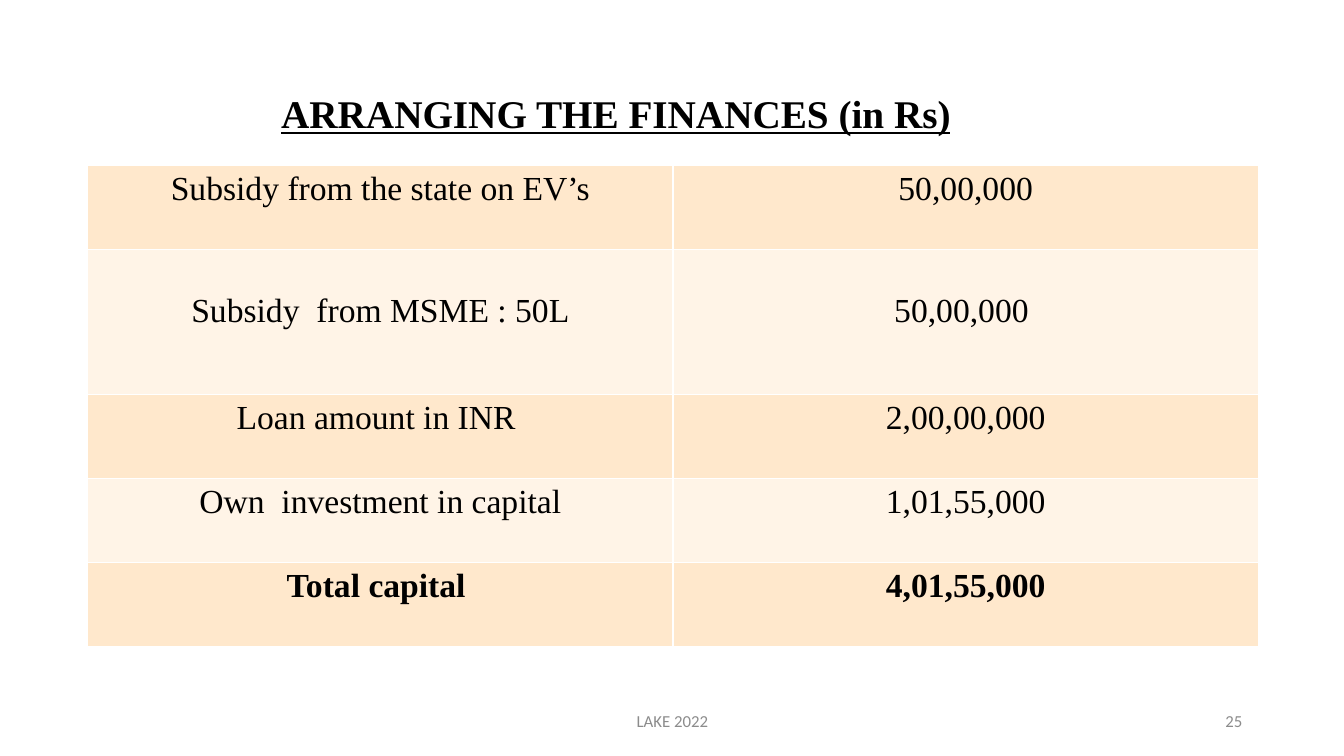
from pptx import Presentation
from pptx.dml.color import RGBColor
from pptx.enum.text import MSO_ANCHOR, PP_ALIGN
from pptx.oxml import parse_xml
from pptx.oxml.ns import nsdecls
from pptx.util import Inches, Pt

BLACK = RGBColor(0x00, 0x00, 0x00)
GREY = RGBColor(0x8C, 0x8C, 0x8C)
PEACH = RGBColor(0xFF, 0xE8, 0xCC)
CREAM = RGBColor(0xFF, 0xF4, 0xE7)
SERIF = "Times New Roman"


def style(para, text, size, face, color, align, bold=False):
    para.text = text
    para.alignment = align
    font = para.font
    font.size = Pt(size)
    font.name = face
    font.color.rgb = color
    font.bold = bold


def label(left, top, width, height, anchor):
    box = slide.shapes.add_textbox(Inches(left), Inches(top), Inches(width), Inches(height))
    frame = box.text_frame
    frame.word_wrap = True
    frame.vertical_anchor = anchor
    return frame.paragraphs[0]


deck = Presentation()
deck.slide_width = Inches(13.33)
deck.slide_height = Inches(7.5)
slide = deck.slides.add_slide(deck.slide_layouts[6])

title = label(2.69, 0.87, 7.17, 0.55, MSO_ANCHOR.TOP)
style(title, "ARRANGING THE FINANCES (in Rs)", 28, SERIF, BLACK, PP_ALIGN.LEFT, True)
title.font.underline = True
title.line_spacing = 0.95

funds = [
    ("Subsidy from the state on EV’s", "50,00,000"),
    ("Subsidy  from MSME : 50L", "50,00,000 "),
    ("Loan amount in INR ", "2,00,00,000"),
    ("Own  investment in capital", "1,01,55,000"),
    ("Total capital ", "4,01,55,000"),
]
TALL = 1
LAST = len(funds) - 1

grid = slide.shapes.add_table(
    len(funds), 2, Inches(0.87), Inches(1.64), Inches(11.61), Inches(4.78)
).table
grid.first_row = False
for row, pair in enumerate(funds):
    grid.rows[row].height = Inches(1.44 if row == TALL else 3.34 / LAST)
    for col, text in enumerate(pair):
        cell = grid.cell(row, col)
        cell.fill.solid()
        cell.fill.fore_color.rgb = CREAM if row % 2 else PEACH
        if row == TALL:
            cell.margin_top = Inches(0.43)
        style(cell.text_frame.paragraphs[0], text, 24, SERIF, BLACK, PP_ALIGN.CENTER, row == LAST)
        props = cell._tc.get_or_add_tcPr()
        for spot, side in enumerate("LRTB"):
            props.insert(spot, parse_xml(
                f'<a:ln{side} {nsdecls("a")} w="12700"><a:solidFill>'
                f'<a:srgbClr val="FFFFFF"/></a:solidFill></a:ln{side}>'
            ))

for left, width, text, align in (
    (4.42, 4.5, "LAKE 2022", PP_ALIGN.CENTER),
    (9.42, 3, "25", PP_ALIGN.RIGHT),
):
    foot = label(left, 6.95, width, 0.4, MSO_ANCHOR.MIDDLE)
    style(foot, text, 12, "Calibri", GREY, align)

deck.save("out.pptx")
